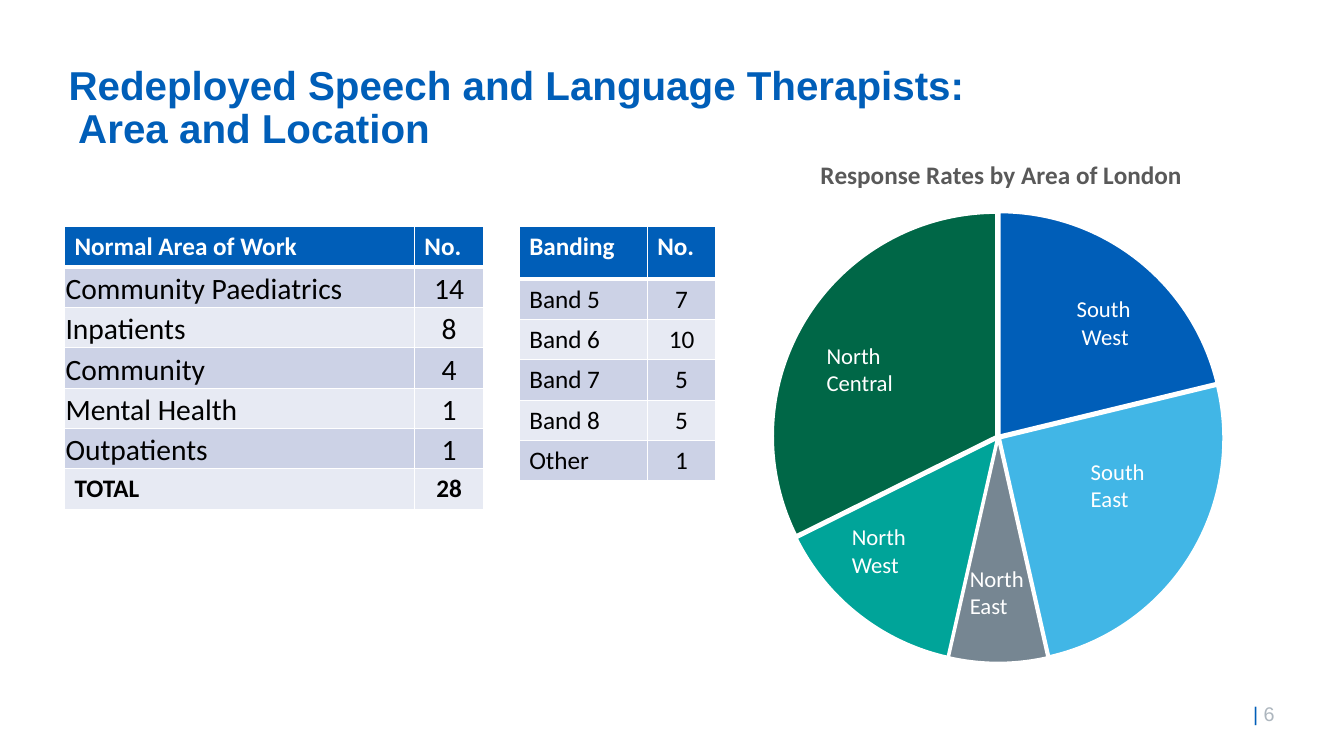
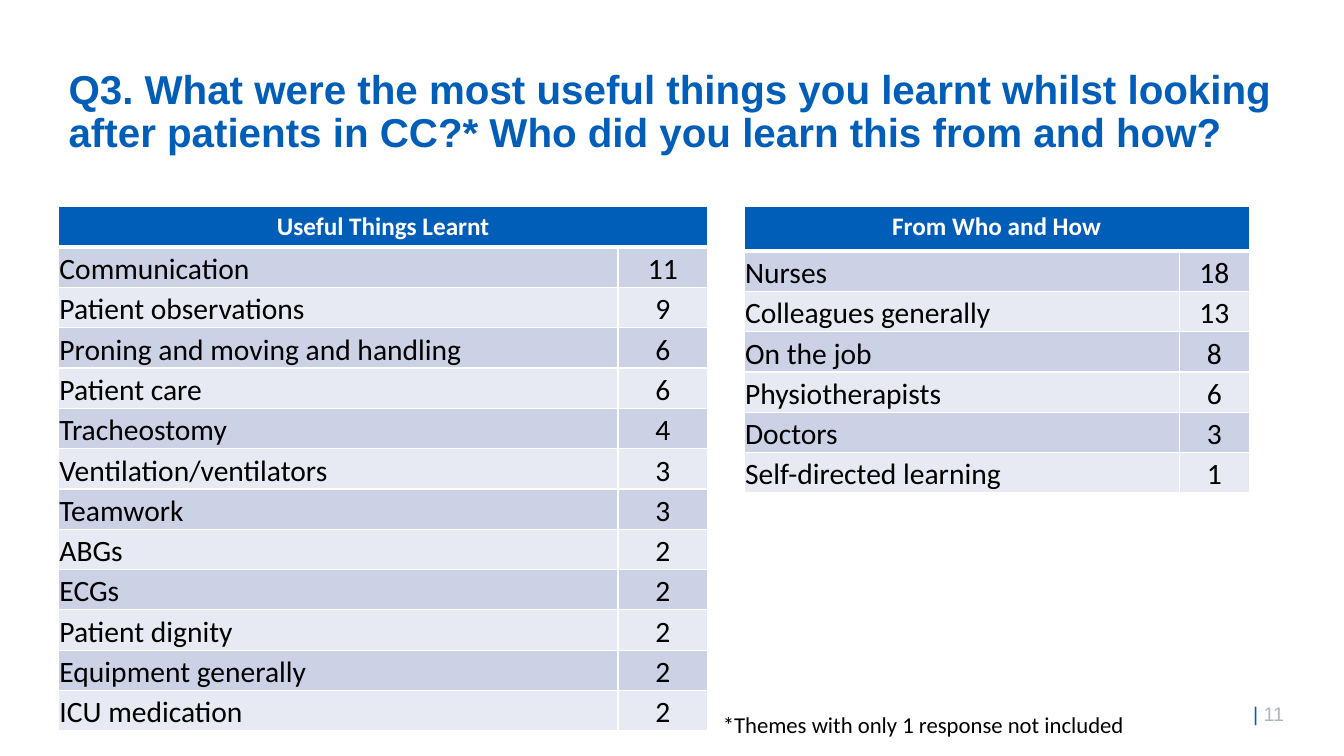
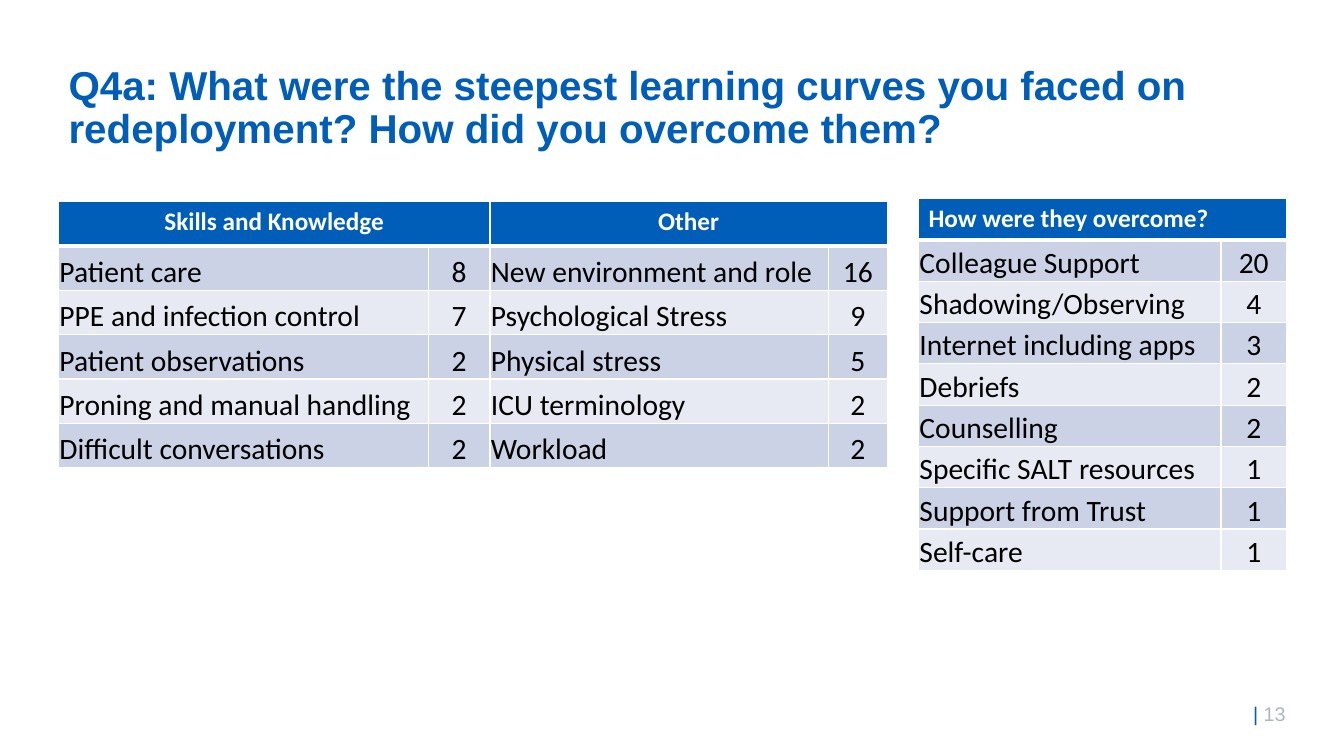
import pptx
import pptx.chart.data
import pptx.dml.color
import pptx.enum.chart
import pptx.enum.text
import pptx.oxml
import pptx.oxml.ns
import pptx.util

Inches = pptx.util.Inches
Pt = pptx.util.Pt
qn = pptx.oxml.ns.qn
ALIGN = pptx.enum.text.PP_ALIGN
ANCHOR = pptx.enum.text.MSO_ANCHOR

BLUE = "005EB8"
WHITE = "FFFFFF"
BLACK = "000000"
GREY = "ADB6BE"
TITLE_GREY = "595959"
BANDS = ("CCD2E6", "E7EAF3")
PIE_COLOURS = (BLUE, "41B6E6", "768692", "00A499", "006747")
BODY_SIZE = 21.1
SMALL_SIZE = 18


def rgb(value):
    return pptx.dml.color.RGBColor.from_string(value)


def add_run(p, text, size=SMALL_SIZE, color=BLACK, font="Calibri", bold=False):
    r = p.add_run()
    r.text = text
    r.font.size = Pt(size)
    r.font.name = font
    r.font.bold = bold
    r.font.color.rgb = rgb(color)


def write(tf, text, align=ALIGN.LEFT, spacing=None, **style):
    for i, line in enumerate(text.split("\n")):
        p = tf.add_paragraph() if i else tf.paragraphs[0]
        p.alignment = align
        p.line_spacing = spacing
        add_run(p, line, **style)


def add_box(slide, left, top, width, height):
    sp = slide.shapes.add_textbox(Inches(left), Inches(top), Inches(width), Inches(height))
    sp.text_frame.word_wrap = True
    return sp.text_frame


def add_slide(prs, title, number, title_top=0.6, title_height=0.67):
    slide = prs.slides.add_slide(prs.slide_layouts[5])
    sp = slide.shapes.title
    sp.left, sp.top = Inches(0.58), Inches(title_top)
    sp.width, sp.height = Inches(12.18), Inches(title_height)
    tf = sp.text_frame
    tf.auto_size = pptx.enum.text.MSO_AUTO_SIZE.NONE
    tf.vertical_anchor = ANCHOR.TOP
    write(tf, title, spacing=0.9, size=28.8, color=BLUE, font="Arial", bold=True)

    p = add_box(slide, 12.33, 6.91, 0.94, 0.34).paragraphs[0]
    add_run(p, "| ", size=14.1, color=BLUE, font="Arial")
    add_run(p, str(number), size=14.1, color=GREY, font="Arial")
    return slide


def set_borders(cell, bottom=1):
    tcPr = cell._tc.get_or_add_tcPr()
    for side, width in (("L", 1), ("R", 1), ("T", 1), ("B", bottom)):
        tcPr.append(pptx.oxml.parse_xml(
            f'<a:ln{side} xmlns:a="{pptx.oxml.ns.nsuri("a")}" w="{Pt(width)}">'
            f'<a:solidFill><a:srgbClr val="{WHITE}"/></a:solidFill></a:ln{side}>'))


def fill_cell(cell, text, fill, bottom=1, tight=False, **style):
    set_borders(cell, bottom)
    cell.fill.solid()
    cell.fill.fore_color.rgb = rgb(fill)
    if tight:
        cell.margin_left = cell.margin_right = cell.margin_top = Inches(0.01)
        cell.margin_bottom = 0
        cell.vertical_anchor = ANCHOR.BOTTOM
    write(cell.text_frame, text, **style)


def add_table(slide, left, top, widths, header, rows, header_height=0.4, row_height=0.4,
              header_align=ALIGN.CENTER, tight=True, total=False):
    height = header_height + row_height * len(rows)
    table = slide.shapes.add_table(len(rows) + 1, len(widths), Inches(left), Inches(top),
                                   Inches(sum(widths)), Inches(height)).table
    for col, width in zip(table.columns, widths):
        col.width = Inches(width)
    for i, row in enumerate(table.rows):
        row.height = Inches(row_height if i else header_height)

    span = len(widths) // len(header)
    for i, text in enumerate(header):
        cell = table.cell(0, i * span)
        if span > 1:
            cell.merge(table.cell(0, (i + 1) * span - 1))
        fill_cell(cell, text, BLUE, bottom=3, align=header_align, color=WHITE, bold=True)

    for i, values in enumerate(rows):
        is_total = total and i == len(rows) - 1
        is_tight = tight and not is_total
        for j, value in enumerate(values):
            fill_cell(table.cell(i + 1, j), str(value), BANDS[i % 2], tight=is_tight,
                      align=ALIGN.CENTER if j % 2 else ALIGN.LEFT,
                      size=BODY_SIZE if is_tight else SMALL_SIZE, bold=is_total)


def set_layout(element, index, target="", **fractions):
    for old in element.findall(qn("c:layout")):
        element.remove(old)
    modes = "".join(f'<c:{k}Mode val="edge"/>' for k in "xy")
    values = "".join(f'<c:{k} val="{v}"/>' for k, v in fractions.items())
    element.insert(index, pptx.oxml.parse_xml(
        f'<c:layout xmlns:c="{pptx.oxml.ns.nsuri("c")}"><c:manualLayout>'
        f'{target}{modes}{values}</c:manualLayout></c:layout>'))


def add_pie(slide, title, values):
    data = pptx.chart.data.CategoryChartData()
    data.categories = [str(i + 1) for i in range(len(values))]
    data.add_series("Series 1", values)
    chart = slide.shapes.add_chart(pptx.enum.chart.XL_CHART_TYPE.PIE, Inches(7.52), Inches(0.82),
                                   Inches(4.76), Inches(6.34), data).chart
    chart.has_legend = False
    chart.font.name = "Calibri"
    chart.font.size = Pt(10)
    chart.font.color.rgb = rgb(BLACK)
    chart.has_title = True
    write(chart.chart_title.text_frame, title, align=None, color=TITLE_GREY, bold=True)
    set_layout(chart.chart_title._element, 1, x=0.12, y=0.11)
    plot = chart.plots[0]
    plot.vary_by_categories = True
    set_layout(chart._chartSpace.chart.plotArea, 0, '<c:layoutTarget val="inner"/>',
               x=0.03, y=0.2, w=0.94, h=0.71)

    series = plot.series[0]
    for i, color in enumerate(PIE_COLOURS):
        fmt = series.points[i].format
        fmt.fill.solid()
        fmt.fill.fore_color.rgb = rgb(color)
        fmt.line.color.rgb = rgb(WHITE)
        fmt.line.width = Pt(1.5)
    explosion = pptx.oxml.parse_xml(
        f'<c:explosion xmlns:c="{pptx.oxml.ns.nsuri("c")}" val="1"/>')
    series._element.find(qn("c:dPt")).addprevious(explosion)


def build_area_slide(prs):
    slide = add_slide(prs, "Redeployed Speech and Language Therapists:\n Area and Location", 6)
    add_table(slide, 0.64, 2.25, (3.47, 0.69), ("Normal Area of Work", "No."), (
        ("Community Paediatrics", 14),
        ("Inpatients", 8),
        ("Community", 4),
        ("Mental Health", 1),
        ("Outpatients", 1),
        ("TOTAL", 28),
    ), header_align=ALIGN.LEFT, total=True)
    add_pie(slide, "Response Rates by Area of London", (21, 25, 7, 14, 32))
    for text, left, top in (
        ("North\nEast", 9.52, 5.55),
        ("North\nWest", 8.35, 5.14),
        ("South\nEast", 10.72, 4.49),
        ("South\n West", 10.58, 2.88),
        ("North\nCentral", 8.1, 3.34),
    ):
        write(add_box(slide, left, top, 1.07, 0.65), text, size=16.2, color=WHITE)
    add_table(slide, 5.15, 2.25, (1.27, 0.68), ("Banding", "No."), (
        ("Band 5", 7),
        ("Band 6", 10),
        ("Band 7", 5),
        ("Band 8", 5),
        ("Other", 1),
    ), header_height=0.52, header_align=ALIGN.LEFT, tight=False)


def build_learning_slide(prs):
    slide = add_slide(prs, "Q3. What were the most useful things you learnt whilst looking after "
                      "patients in CC?* Who did you learn this from and how?", 11, 0.64, 1.21)
    add_table(slide, 0.58, 2.05, (5.55, 0.89), ("Useful Things Learnt",), (
        ("Communication", 11),
        ("Patient observations", 9),
        ("Proning and moving and handling", 6),
        ("Patient care", 6),
        ("Tracheostomy", 4),
        ("Ventilation/ventilators", 3),
        ("Teamwork", 3),
        ("ABGs", 2),
        ("ECGs", 2),
        ("Patient dignity", 2),
        ("Equipment generally", 2),
        ("ICU medication", 2),
    ))
    add_table(slide, 7.38, 2.05, (4.32, 0.69), ("From Who and How",), (
        ("Nurses", 18),
        ("Colleagues generally", 13),
        ("On the job", 8),
        ("Physiotherapists", 6),
        ("Doctors", 3),
        ("Self-directed learning", 1),
    ), header_height=0.44)
    write(add_box(slide, 7.07, 7, 5.19, 0.37), "*Themes with only 1 response not included",
          size=16.2)


def build_challenges_slide(prs):
    slide = add_slide(prs, "Q4a: What were the steepest learning curves you faced on redeployment? "
                      "How did you overcome them?", 13)
    add_table(slide, 0.58, 2, (3.67, 0.61, 3.36, 0.58), ("Skills and Knowledge", "Other"), (
        ("Patient care", 8, "New environment and role", 16),
        ("PPE and infection control", 7, "Psychological Stress", 9),
        ("Patient observations", 2, "Physical stress", 5),
        ("Proning and manual handling", 2, "ICU terminology", 2),
        ("Difficult conversations", 2, "Workload", 2),
    ), header_height=0.44, row_height=0.44)
    add_table(slide, 9.11, 1.97, (3, 0.65), ("How were they overcome?",), (
        ("Colleague Support", 20),
        ("Shadowing/Observing", 4),
        ("Internet including apps", 3),
        ("Debriefs", 2),
        ("Counselling", 2),
        ("Specific SALT resources", 1),
        ("Support from Trust", 1),
        ("Self-care", 1),
    ), header_height=0.41, row_height=0.41, header_align=ALIGN.LEFT)


def main():
    prs = pptx.Presentation()
    prs.slide_width = Inches(13.33)
    prs.slide_height = Inches(7.5)
    build_area_slide(prs)
    build_learning_slide(prs)
    build_challenges_slide(prs)
    prs.save("out.pptx")


if __name__ == "__main__":
    main()
